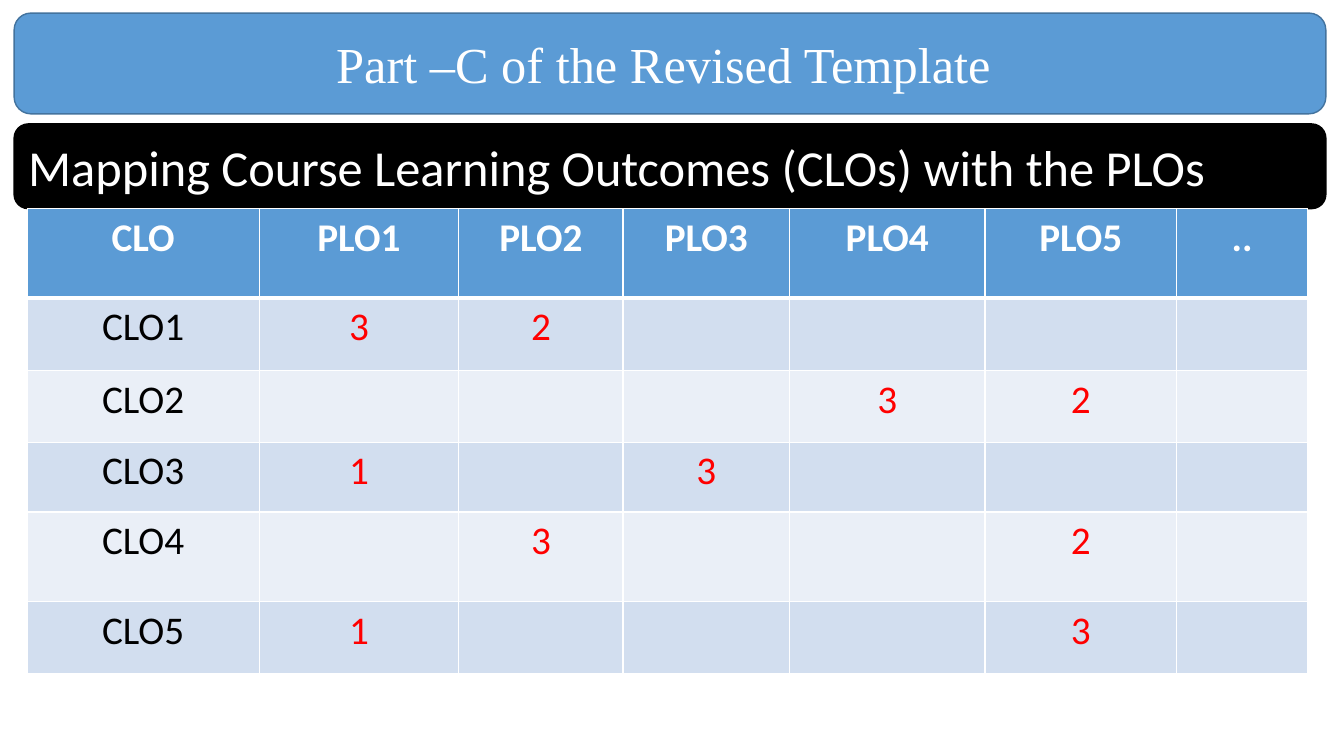
from lxml import etree
from pptx import Presentation, util as u
from pptx.dml.color import RGBColor
from pptx.enum import shapes, text
from pptx.oxml.ns import qn

BLUE, WHITE, BLACK, RED = "5B9BD5", "FFFFFF", "000000", "FF0000"
BANDS = ["D2DEEF", "EAEFF7"]
BANNER_LEFT, BANNER_WIDTH = 0.14, 13.01

PLOS = ["PLO1", "PLO2", "PLO3", "PLO4", "PLO5", ".."]
MAPPING = {
    "CLO1": {"PLO1": 3, "PLO2": 2},
    "CLO2": {"PLO4": 3, "PLO5": 2},
    "CLO3": {"PLO1": 1, "PLO3": 3},
    "CLO4": {"PLO2": 3, "PLO5": 2},
    "CLO5": {"PLO1": 1, "PLO5": 3},
}
COLUMN_WIDTHS = [2.3, 1.98, 1.63, 1.65, 1.94, 1.9, 1.3]
ROW_HEIGHTS = [0.89, 0.72, 0.71, 0.69, 0.89, 0.71]


def colour(hex_string):
    return RGBColor.from_string(hex_string)


def write(frame, words, size=36, font="Calibri", color=WHITE, bold=False,
          align=text.PP_ALIGN.CENTER):
    paragraph = frame.paragraphs[0]
    paragraph.alignment = align
    run = paragraph.add_run()
    run.text = words
    run.font.size = u.Pt(size)
    run.font.name = font
    run.font.bold = bold
    run.font.color.rgb = colour(color)


class MappingSlide:
    def __init__(self, deck):
        self.slide = deck.slides.add_slide(deck.slide_layouts[5])

    def banner(self, top, height, fill, line):
        band = self.slide.shapes.add_shape(
            shapes.MSO_SHAPE.ROUNDED_RECTANGLE, u.Inches(BANNER_LEFT),
            u.Inches(top), u.Inches(BANNER_WIDTH), u.Inches(height))
        band.shadow.inherit = False
        band.fill.solid()
        band.fill.fore_color.rgb = colour(fill)
        band.line.color.rgb = colour(line)
        band.line.width = u.Pt(1)
        band.text_frame.word_wrap = True
        band.text_frame.vertical_anchor = text.MSO_ANCHOR.MIDDLE
        return band

    def title(self, words, band):
        heading = self.slide.shapes.title
        heading.left, heading.top = band.left, band.top
        heading.width, heading.height = band.width, band.height
        heading.text_frame.vertical_anchor = text.MSO_ANCHOR.MIDDLE
        write(heading.text_frame, words, font="Times New Roman")
        band.element.addnext(heading.element)

    def borders(self, cell, top=1, bottom=1):
        properties = cell._tc.get_or_add_tcPr()
        for side, width in (("L", 1), ("R", 1), ("T", top), ("B", bottom)):
            edge = etree.SubElement(properties, qn(f"a:ln{side}"), w=str(u.Pt(width)))
            fill = etree.SubElement(edge, qn("a:solidFill"))
            etree.SubElement(fill, qn("a:srgbClr"), val=WHITE)

    def cell(self, cell, words, fill, edges, **style):
        self.borders(cell, **edges)
        cell.fill.solid()
        cell.fill.fore_color.rgb = colour(fill)
        if words:
            write(cell.text_frame, words, size=28, **style)

    def table(self, left, top):
        grid = self.slide.shapes.add_table(
            len(ROW_HEIGHTS), len(COLUMN_WIDTHS), u.Inches(left), u.Inches(top),
            u.Inches(sum(COLUMN_WIDTHS)), u.Inches(sum(ROW_HEIGHTS))).table
        grid.horz_banding = False
        for column, width in zip(grid.columns, COLUMN_WIDTHS):
            column.width = u.Inches(width)
        for row, height in zip(grid.rows, ROW_HEIGHTS):
            row.height = u.Inches(height)
        for c, label in enumerate(["CLO"] + PLOS):
            self.cell(grid.cell(0, c), label, BLUE, {"bottom": 3}, bold=True)
        for r, (clo, levels) in enumerate(MAPPING.items(), 1):
            fill = BANDS[(r - 1) % 2]
            edges = {"top": 3 if r == 1 else 1}
            self.cell(grid.cell(r, 0), clo, fill, edges, color=BLACK)
            for c, plo in enumerate(PLOS, 1):
                level = str(levels.get(plo, ""))
                self.cell(grid.cell(r, c), level, fill, edges, color=RED)


def main():
    deck = Presentation()
    deck.slide_width, deck.slide_height = u.Inches(13.33), u.Inches(7.5)
    page = MappingSlide(deck)
    title_band = page.banner(0.13, 1, BLUE, "43739E")
    page.title("Part –C of the Revised Template ", title_band)
    subtitle_band = page.banner(1.23, 0.84, BLACK, BLACK)
    write(subtitle_band.text_frame,
          "Mapping Course Learning Outcomes (CLOs) with the PLOs",
          align=text.PP_ALIGN.LEFT)
    page.table(0.27, 2.07)
    deck.save("out.pptx")


if __name__ == "__main__":
    main()
